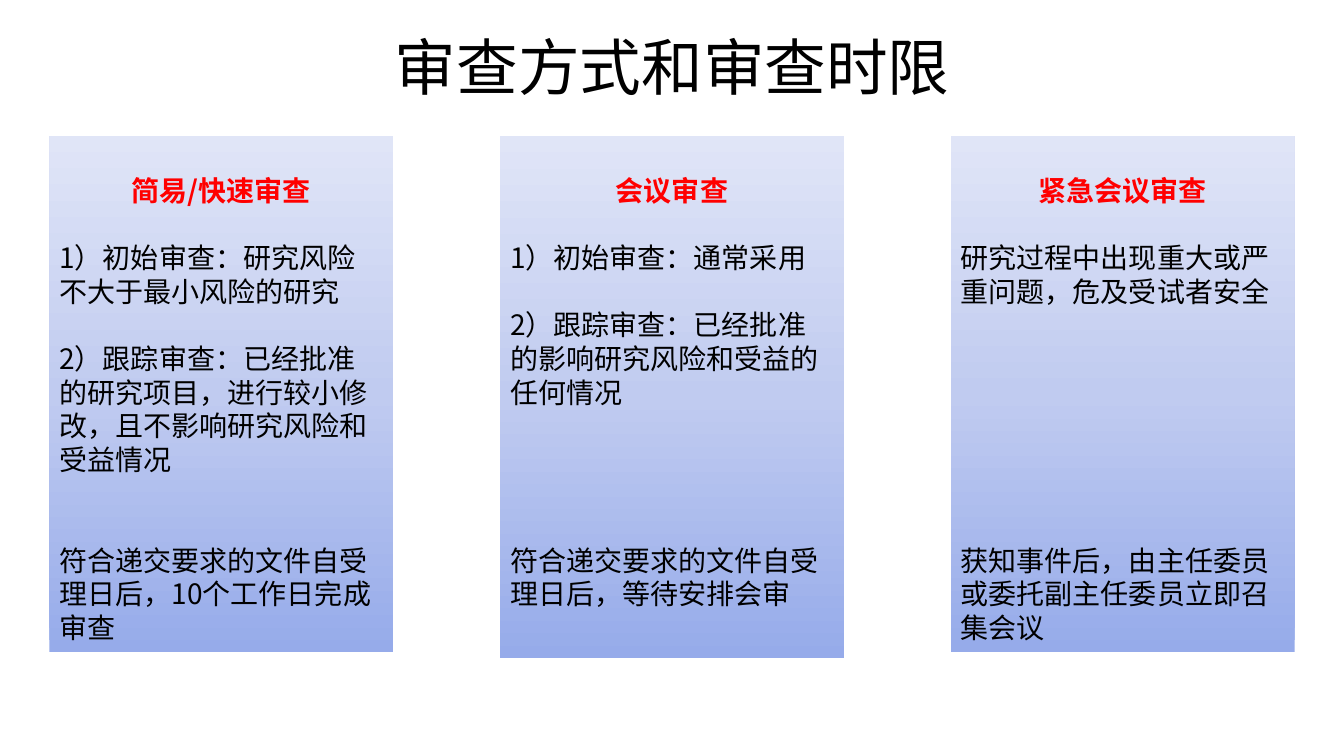
from copy import deepcopy
from dataclasses import dataclass

from lxml import etree
from pptx import Presentation
from pptx.dml.color import RGBColor
from pptx.enum.shapes import MSO_SHAPE
from pptx.enum.text import MSO_ANCHOR, PP_ALIGN
from pptx.oxml.ns import qn
from pptx.util import Inches, Pt

RECTANGLE = MSO_SHAPE.RECTANGLE
TOP, MIDDLE = MSO_ANCHOR.TOP, MSO_ANCHOR.MIDDLE
LEFT, CENTER = PP_ALIGN.LEFT, PP_ALIGN.CENTER

FONT = "Noto Sans CJK SC"
BLACK, RED = "000000", "FF0000"
PANEL_STOPS = ((0, "96ABEA"), (0.5, "C0CBF0"), (1, "E0E5F7"))

# Grid in inches: equal margins, three panels spread evenly
SLIDE_W, SLIDE_H = 13.33, 7.5
MARGIN, PANEL_TOP, PANEL_W = 0.49, 1.35, 3.41
PANEL_STEP = (SLIDE_W - 2 * MARGIN - PANEL_W) / 2
LINE = 24  # text row height in points


@dataclass(frozen=True)
class Passage:
    text: str
    rows_before: int = 1


@dataclass(frozen=True)
class ReviewMode:
    heading: str
    passages: tuple[Passage, ...]
    height: float = 5.12


REVIEW_MODES = (
    ReviewMode("简易/快速审查", (
        Passage("1）初始审查：研究风险不大于最小风险的研究"),
        Passage("2）跟踪审查：已经批准的研究项目，进行较小修改，且不影响研究风险和受益情况"),
        Passage("符合递交要求的文件自受理日后，10个工作日完成审查", 2),
    )),
    ReviewMode("会议审查", (
        Passage("1）初始审查：通常采用"),
        Passage("2）跟踪审查：已经批准的影响研究风险和受益的任何情况"),
        Passage("符合递交要求的文件自受理日后，等待安排会审", 4),
    ), 5.18),
    ReviewMode("紧急会议审查", (
        Passage("研究过程中出现重大或严重问题，危及受试者安全"),
        Passage("获知事件后，由主任委员或委托副主任委员立即召集会议", 7),
    )),
)


def rgb(value: str) -> RGBColor:
    return RGBColor.from_string(value)


def add_run(paragraph, text: str, size: int, color: str, bold: bool = False) -> None:
    run = paragraph.add_run()
    run.text = text
    font = run.font
    font.size, font.bold, font.name = Pt(size), bold, FONT
    font.color.rgb = rgb(color)
    east_asian = etree.SubElement(run._r.get_or_add_rPr(), qn("a:ea"))
    east_asian.set("typeface", FONT)


def fill_gradient(panel) -> None:
    panel.fill.gradient()
    panel.fill.gradient_angle = 90
    stop_list = panel._element.spPr.find(f".//{qn('a:gsLst')}")
    stop_list.append(deepcopy(stop_list[0]))
    for stop, (position, color) in zip(panel.fill.gradient_stops, PANEL_STOPS):
        stop.position = position
        stop.color.rgb = rgb(color)


def add_title(slide, text: str) -> None:
    title = slide.shapes.title
    title.left, title.top = Inches(3.2), Inches(0.11)
    title.width, title.height = Inches(6.94), Inches(1.19)
    title.text_frame.vertical_anchor = MIDDLE
    paragraph = title.text_frame.paragraphs[0]
    paragraph.alignment, paragraph.line_spacing = CENTER, 0.9
    add_run(paragraph, text, 44, BLACK)


def add_panel(slide, column: int, mode: ReviewMode) -> None:
    panel = slide.shapes.add_shape(
        RECTANGLE, Inches(MARGIN + column * PANEL_STEP), Inches(PANEL_TOP),
        Inches(PANEL_W), Inches(mode.height))
    panel.shadow.inherit = False
    panel.line.fill.background()
    fill_gradient(panel)

    frame = panel.text_frame
    frame.word_wrap, frame.vertical_anchor = True, TOP
    frame.margin_left = frame.margin_right = Inches(0.1)
    frame.margin_top, frame.margin_bottom = Inches(0.37), Inches(0.05)

    # Heading
    heading = frame.paragraphs[0]
    heading.alignment, heading.line_spacing = CENTER, Pt(LINE)
    add_run(heading, mode.heading, 20, RED, bold=True)

    # Criteria and time limit
    for passage in mode.passages:
        paragraph = frame.add_paragraph()
        paragraph.alignment, paragraph.line_spacing = LEFT, Pt(LINE)
        paragraph.space_before = Pt(passage.rows_before * LINE)
        add_run(paragraph, passage.text, 20, BLACK)


def main() -> None:
    deck = Presentation()
    deck.slide_width, deck.slide_height = Inches(SLIDE_W), Inches(SLIDE_H)
    slide = deck.slides.add_slide(deck.slide_layouts.get_by_name("Title Only"))
    add_title(slide, "审查方式和审查时限")
    for column, mode in enumerate(REVIEW_MODES):
        add_panel(slide, column, mode)
    deck.save("out.pptx")


if __name__ == "__main__":
    main()
